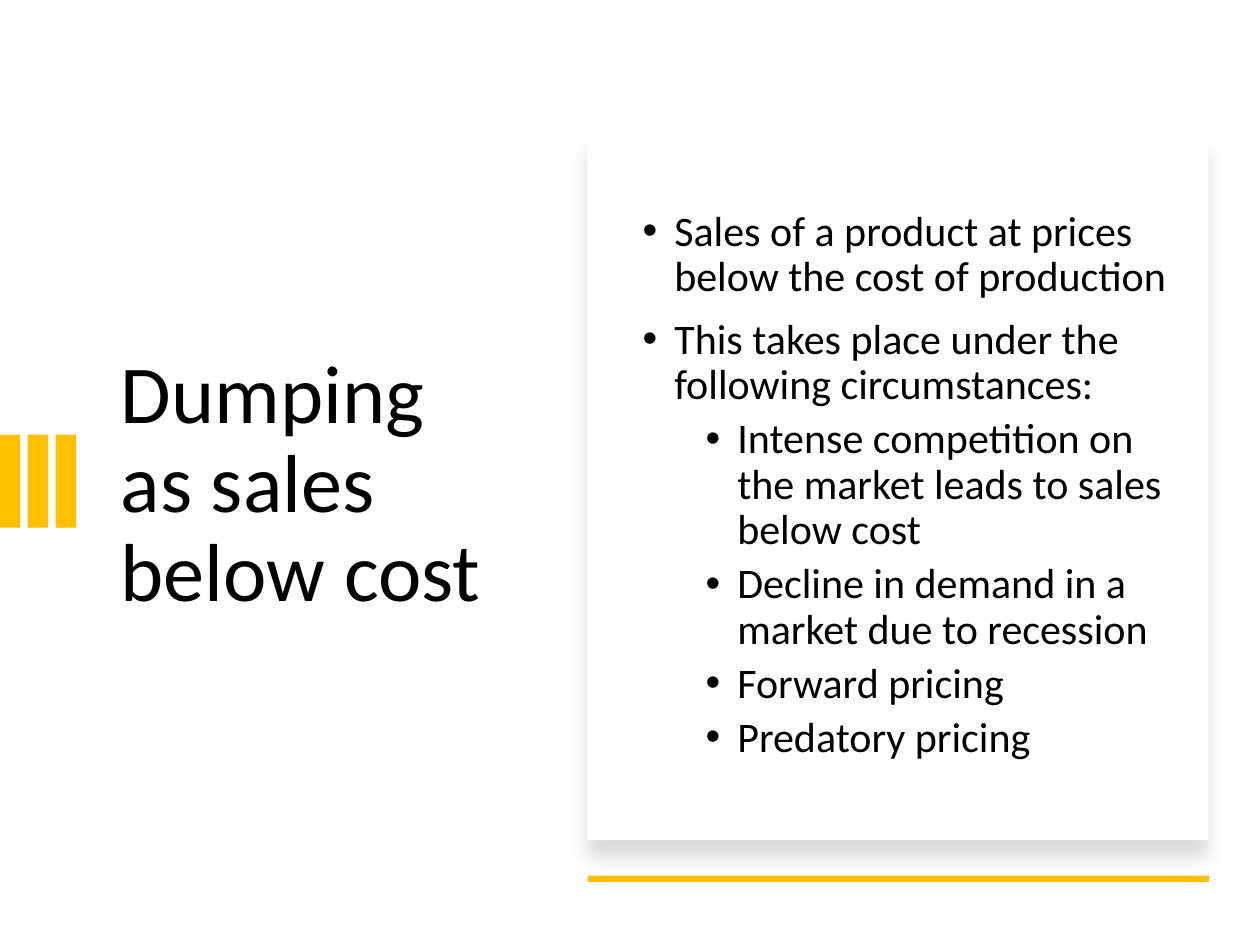
from lxml.etree import SubElement
from pptx import Presentation
from pptx.dml.color import RGBColor
from pptx.enum.shapes import MSO_SHAPE as Preset
from pptx.enum.text import MSO_ANCHOR as Anchor, MSO_AUTO_SIZE as AutoSize, PP_ALIGN as Align
from pptx.oxml.ns import qn
from pptx.util import Cm, Pt

TITLE = "Dumping as sales below cost"
POINTS = [
    (0, "Sales of a product at prices below the cost of production"),
    (0, "This takes place under the following circumstances:"),
    (1, "Intense competition on the market leads to sales below cost"),
    (1, "Decline in demand in a market due to recession"),
    (1, "Forward pricing"),
    (1, "Predatory pricing"),
]
COLORS = {"accent": "FFC000", "card": "FFFFFF", "text": "000000", "shadow": "000000"}
FONT = "Calibri"
INDENTS = [0.64, 1.91]
HANGING = 0.64
SPACES_BEFORE = [10, 5]
BAR_COUNT, BAR_PITCH = 3, 0.56


def add_block(shapes, left, top, width, height, color):
    block = shapes.add_shape(Preset.RECTANGLE, Cm(left), Cm(top), Cm(width), Cm(height))
    block.shadow.inherit = False
    block.fill.solid()
    block.fill.fore_color.rgb = RGBColor.from_string(COLORS[color])
    block.line.fill.background()
    return block


def add_soft_shadow(block):
    effects = block.element.spPr.find(qn("a:effectLst"))
    shadow = SubElement(effects, qn("a:outerShdw"), blurRad=str(Pt(11)), dist=str(Pt(10)),
                        dir="5400000", algn="t", rotWithShape="0")
    tint = SubElement(shadow, qn("a:srgbClr"), val=COLORS["shadow"])
    SubElement(tint, qn("a:alpha"), val="15000")


def place(holder, left, top, width, height):
    holder.left, holder.top, holder.width, holder.height = map(Cm, (left, top, width, height))
    frame = holder.text_frame
    frame.word_wrap = True
    frame.auto_size = AutoSize.NONE
    frame.vertical_anchor = Anchor.MIDDLE
    return frame


def write(paragraph, text, size):
    paragraph.alignment = Align.LEFT
    paragraph.line_spacing = 0.9
    run = paragraph.add_run()
    run.text = text
    run.font.name = FONT
    run.font.size = Pt(size)
    run.font.color.rgb = RGBColor.from_string(COLORS["text"])


def add_bullet(paragraph, level):
    paragraph.level = level
    paragraph.space_before = Pt(SPACES_BEFORE[level])
    properties = paragraph._p.get_or_add_pPr()
    properties.set("marL", str(Cm(INDENTS[level])))
    properties.set("indent", str(-Cm(HANGING)))
    SubElement(properties, qn("a:buFont"), typeface="Arial")
    SubElement(properties, qn("a:buChar"), char="•")


def main():
    """Build the slide on dumping as sales below cost."""
    deck = Presentation()
    deck.slide_width, deck.slide_height = Cm(25.4), Cm(19.05)
    slide = deck.slides.add_slide(deck.slide_layouts[1])
    title, points = slide.placeholders

    heading = place(title, 2.18, 3.81, 8.1, 11.96)
    write(heading.paragraphs[0], TITLE, 47)

    bars = slide.shapes.add_group_shape()
    for index in range(BAR_COUNT):
        add_block(bars.shapes, index * BAR_PITCH, 8.76, 0.41, 1.88, "accent")

    card = add_block(slide.shapes, 11.84, 2.72, 12.52, 14.22, "card")
    add_soft_shadow(card)
    add_block(slide.shapes, 11.85, 17.65, 12.52, 0.13, "accent")

    points.element.addprevious(bars.element)
    points.element.addprevious(card.element)
    body = place(points, 12.7, 3.81, 11.23, 11.96)
    for index, (level, text) in enumerate(POINTS):
        paragraph = body.add_paragraph() if index else body.paragraphs[0]
        write(paragraph, text, 24)
        add_bullet(paragraph, level)

    deck.save("out.pptx")


if __name__ == "__main__":
    main()
